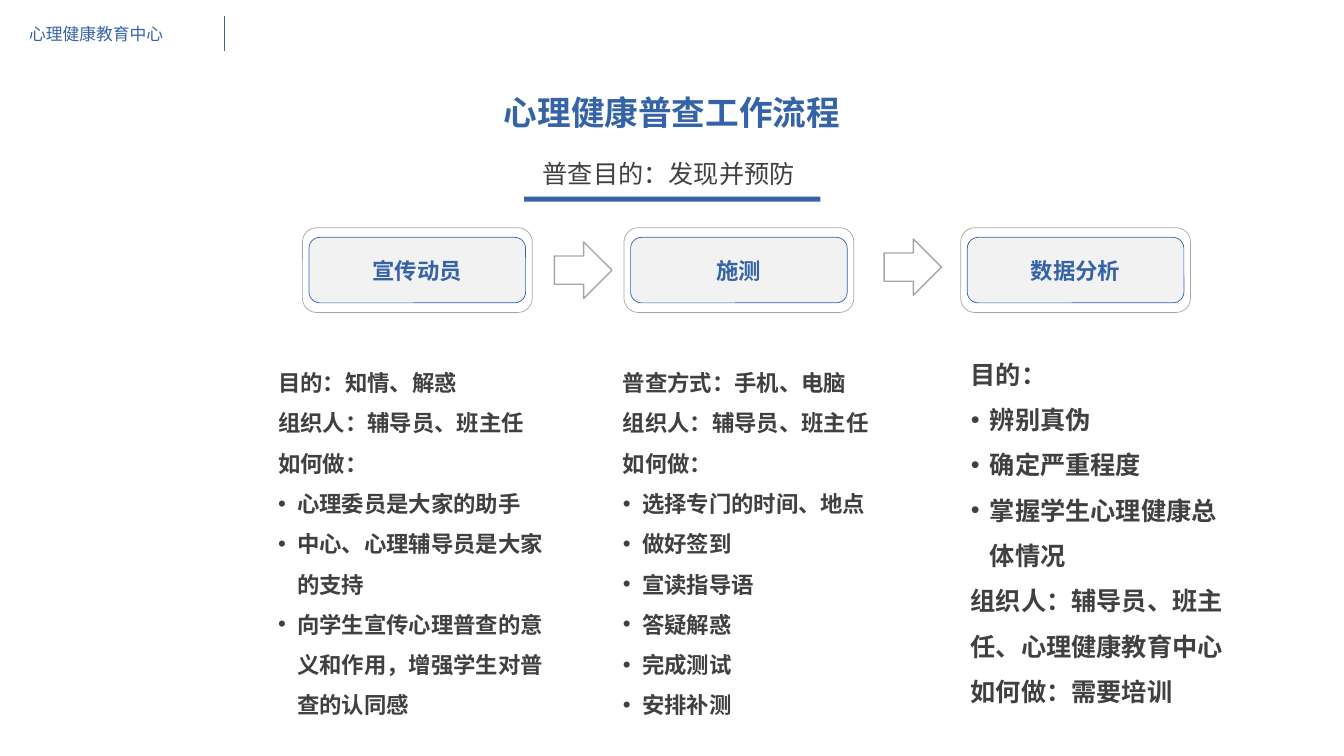
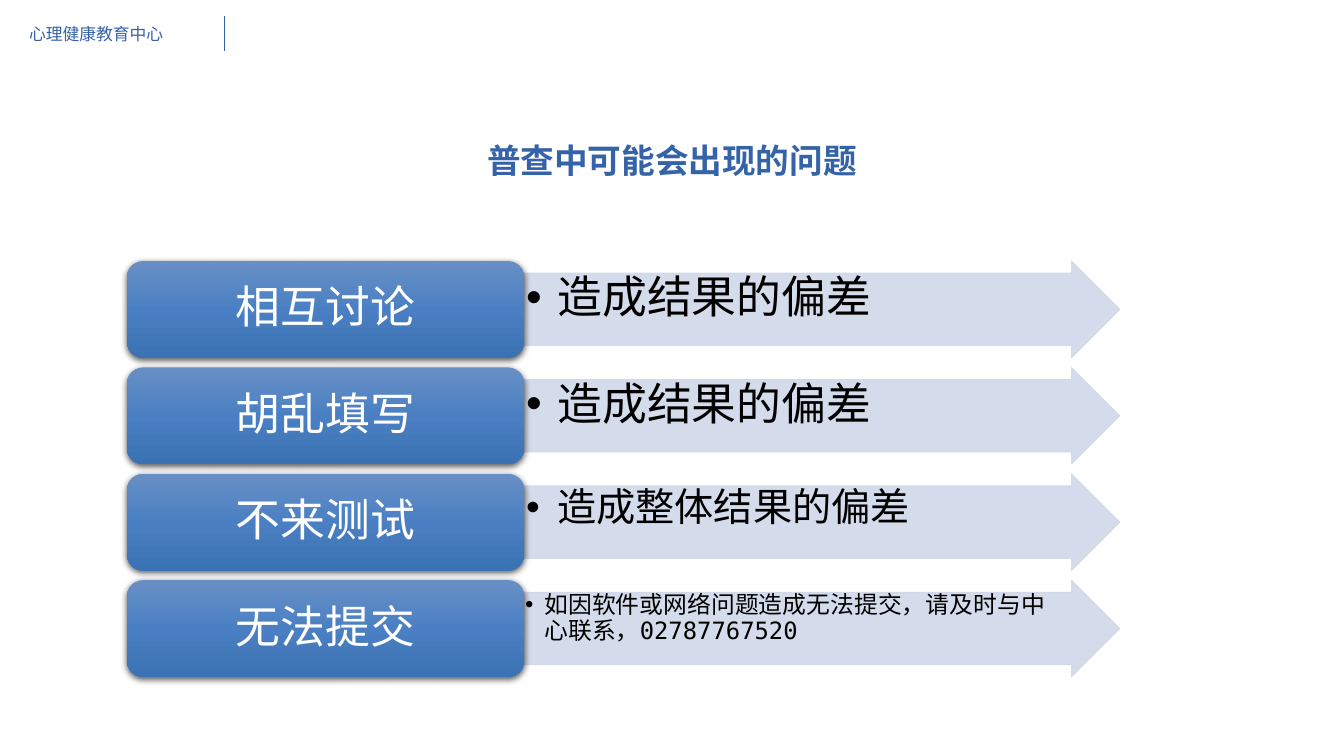
"""Builds two slides about the workflow and pitfalls of a mental health survey."""

import copy
import dataclasses
import typing

import lxml.etree
import pptx
import pptx.dml.color
import pptx.enum.dml
import pptx.enum.shapes
import pptx.enum.text
import pptx.oxml.ns
import pptx.util

SLIDE_WIDTH = pptx.util.Inches(13.333)
SLIDE_HEIGHT = pptx.util.Inches(7.5)

BLUE, GREY, DARK, PALE = "3563A8", "A6A6A6", "404040", "F2F2F2"
ARROW_BLUE, BLACK, WHITE = "D0D8E8", "000000", "FFFFFF"
BAR_GRADIENT = ((0, "688FC5"), (50, "4A80C3"), (100, "3B72B3"))
SANS, MONO, HEADER_FONT = "Noto Sans CJK SC", "DejaVu Sans Mono", "Arial"

PRESET = pptx.enum.shapes.MSO_SHAPE
ANCHOR = pptx.enum.text.MSO_ANCHOR
ALIGN = pptx.enum.text.PP_ALIGN
LEFT, CENTER = ALIGN.LEFT, ALIGN.CENTER


@dataclasses.dataclass(frozen=True)
class Area:
    """Holds a rectangle in percent of the slide's width and height."""

    left: float
    top: float
    width: float
    height: float

    def lengths(self) -> tuple[int, int, int, int]:
        """Returns left, top, width and height as lengths."""
        return (across(self.left), down(self.top), across(self.width), down(self.height))

    def centered(self, width: float, height: float) -> "Area":
        """Returns a smaller area with the same centre."""
        return Area(self.left + (self.width - width) / 2,
                    self.top + (self.height - height) / 2, width, height)


@dataclasses.dataclass(frozen=True)
class Style:
    """Holds the format of a text."""

    size: float
    color: str
    font: str = SANS
    bold: bool = False
    align: typing.Any = LEFT
    spacing: float = 1.0
    indent: float = 0.19


@dataclasses.dataclass(frozen=True)
class Step:
    """Holds one workflow step with its card and its list."""

    name: str
    card_left: float
    area: Area
    size: float
    lines: tuple[str, ...]


@dataclasses.dataclass(frozen=True)
class Problem:
    """Holds one problem with its effect."""

    name: str
    effect: str
    size: float = 32
    indent: float = 0.31
    inset: float = 0.02


BULLET = "•"
STEPS = (
    Step("宣传动员", 22.5, Area(19.95, 46.4, 22.2, 52), 16, (
        "目的：知情、解惑", "组织人：辅导员、班主任", "如何做：",
        "•心理委员是大家的助手", "•中心、心理辅导员是大家的支持",
        "•向学生宣传心理普查的意义和作用，增强学生对普查的认同感")),
    Step("施测", 46.43, Area(45.6, 46.4, 22.2, 52), 16, (
        "普查方式：手机、电脑", "组织人：辅导员、班主任", "如何做：",
        "•选择专门的时间、地点", "•做好签到", "•宣读指导语",
        "•答疑解惑", "•完成测试", "•安排补测")),
    Step("数据分析", 71.48, Area(71.48, 44.8, 21.22, 52), 18, (
        "目的：", "•辨别真伪", "•确定严重程度", "•掌握学生心理健康总体情况",
        "组织人：辅导员、班主任、心理健康教育中心", "如何做：需要培训")),
)
STEP_ARROWS = (Area(41.25, 32, 4.28, 7.47), Area(65.78, 31.6, 4.28, 7.47))
PROBLEMS = (
    Problem("相互讨论", "•造成结果的偏差"),
    Problem("胡乱填写", "•造成结果的偏差"),
    Problem("不来测试", "•造成整体结果的偏差", 28),
    Problem("无法提交", "•如因软件或网络问题造成无法提交，请及时与中心联系，02787767520",
            17, 0.19, 0.01),
)
PROBLEM_TOP, PROBLEM_PITCH, PROBLEM_HEIGHT = 34.53, 14.07, 12.8

TITLE_STYLE = Style(24, BLUE, bold=True, align=CENTER)
CARD_STYLE = Style(16, BLUE, bold=True, align=CENTER)
BAR_STYLE = Style(32, WHITE, MONO, align=CENTER, spacing=0.9)


def across(share: float) -> int:
    """Returns a share of the slide's width."""
    return round(SLIDE_WIDTH * share / 100)


def down(share: float) -> int:
    """Returns a share of the slide's height."""
    return round(SLIDE_HEIGHT * share / 100)


def color(value: str) -> pptx.dml.color.RGBColor:
    """Returns the colour of a hex string."""
    return pptx.dml.color.RGBColor.from_string(value)


def assign(target: typing.Any, formats: dict[str, typing.Any]) -> None:
    """Sets each attribute of the target."""
    for name, value in formats.items():
        setattr(target, name, value)


def add_element(parent: typing.Any, tag: str, **attributes: str) -> typing.Any:
    """Appends a drawing element."""
    return lxml.etree.SubElement(parent, pptx.oxml.ns.qn(f"a:{tag}"), attributes)


def write_text(box: typing.Any, lines: typing.Sequence[str], style: Style,
               anchor: typing.Any = ANCHOR.TOP, wrap: bool = True,
               insets: tuple[float, float, float, float] = (0.1, 0.05, 0.1, 0.05)) -> None:
    """Writes one paragraph a line, with a bullet where the line has one."""
    frame = box.text_frame
    sides = ("margin_left", "margin_top", "margin_right", "margin_bottom")
    assign(frame, {"auto_size": pptx.enum.text.MSO_AUTO_SIZE.NONE,
                   "word_wrap": wrap, "vertical_anchor": anchor})
    assign(frame, {side: pptx.util.Inches(inset) for side, inset in zip(sides, insets)})
    for index, line in enumerate(lines):
        para = frame.add_paragraph() if index else frame.paragraphs[0]
        assign(para, {"alignment": style.align, "line_spacing": style.spacing,
                      "space_before": pptx.util.Pt(0), "space_after": pptx.util.Pt(0)})
        bulleted = line.startswith(BULLET)
        indent = pptx.util.Inches(style.indent) if bulleted else 0
        properties = para._p.get_or_add_pPr()
        properties.set("marL", str(indent))
        properties.set("indent", str(-indent))
        if bulleted:
            add_element(properties, "buFont", typeface="Arial")
            add_element(properties, "buChar", char=BULLET)
        else:
            add_element(properties, "buNone")
        span = para.add_run()
        span.text = line.removeprefix(BULLET)
        assign(span.font, {"size": pptx.util.Pt(style.size), "bold": style.bold,
                           "name": style.font})
        span.font.color.rgb = color(style.color)
        add_element(span.font._element, "ea", typeface=SANS)


def fill_placeholder(page: typing.Any, index: int, area: Area,
                     lines: typing.Sequence[str], style: Style) -> None:
    """Moves a placeholder and writes its text."""
    box = page.placeholders[index]
    assign(box, dict(zip(("left", "top", "width", "height"), area.lengths())))
    write_text(box, lines, style)


def add_preset(page: typing.Any, kind: typing.Any, area: Area, fill: str = "",
               line: str = "", weight: float = 0.5) -> typing.Any:
    """Adds a preset shape without a shadow."""
    shape = page.shapes.add_shape(kind, *area.lengths())
    shape.shadow.inherit = False
    if fill:
        shape.fill.solid()
        shape.fill.fore_color.rgb = color(fill)
    else:
        shape.fill.background()
    if line:
        shape.line.color.rgb = color(line)
        shape.line.width = pptx.util.Pt(weight)
    else:
        shape.line.fill.background()
    return shape


def make_translucent(shape: typing.Any, opacity: int) -> None:
    """Sets the opacity of a shape's fill and line in percent."""
    for tone in shape._element.spPr.iter(pptx.oxml.ns.qn("a:srgbClr")):
        add_element(tone, "alpha", val=str(opacity * 1000))


def style_bar(shape: typing.Any) -> None:
    """Gives a bar its gradient and shadow."""
    shape.fill.gradient()
    shape.fill.gradient_angle = 270
    properties = shape._element.spPr
    stops = properties.find(".//" + pptx.oxml.ns.qn("a:gsLst"))
    for stop in list(stops):
        stops.remove(stop)
    for position, tone in BAR_GRADIENT:
        stop = add_element(stops, "gs", pos=str(position * 1000))
        add_element(stop, "srgbClr", val=tone)
    effects = properties.find(pptx.oxml.ns.qn("a:effectLst"))
    shadow = add_element(effects, "outerShdw", blurRad=str(pptx.util.Pt(4.5)),
                         dist=str(pptx.util.Pt(1.5)), dir="5400000", rotWithShape="0")
    add_element(add_element(shadow, "srgbClr", val=BLACK), "alpha", val="63000")


def start_page(deck: typing.Any, layout: int, title: str, title_top: float) -> typing.Any:
    """Adds a slide with its header and title."""
    page = deck.slides.add_slide(deck.slide_layouts[layout])
    for box in list(page.placeholders):
        if box.placeholder_format.idx >= 10:
            box._element.getparent().remove(box._element)
    fill_placeholder(page, 0, Area(30.15, title_top, 39.68, 6.67), (title,), TITLE_STYLE)
    divider = page.shapes.add_connector(
        pptx.enum.shapes.MSO_CONNECTOR.STRAIGHT,
        across(16.72), down(2.13), across(16.72), down(6.8))
    divider.line.color.rgb = color(BLUE)
    divider.line.width = pptx.util.Pt(0.5)
    add_element(divider._element.spPr, "effectLst")
    header = page.shapes.add_textbox(*Area(1.42, 2.53, 11.62, 4).lengths())
    write_text(header, ("心理健康教育中心",), Style(12, BLUE, HEADER_FONT), wrap=False)
    return page


def add_workflow(deck: typing.Any) -> None:
    """Adds the slide with the workflow steps."""
    page = start_page(deck, 4, "心理健康普查工作流程", 11.47)
    fill_placeholder(page, 1, Area(26.62, 20.27, 46.28, 5.33),
                     ("普查目的：发现并预防",), Style(18, DARK, align=CENTER))
    add_preset(page, PRESET.RECTANGLE, Area(39, 26, 22.05, 0.67), BLUE)
    for index, step in enumerate(STEPS, start=2):
        frame = Area(step.card_left, 30.13, 17.1, 11.2)
        card = add_preset(page, PRESET.ROUNDED_RECTANGLE,
                          frame.centered(16.12, 8.67), PALE, BLUE)
        write_text(card, (step.name,), CARD_STYLE, ANCHOR.MIDDLE)
        add_preset(page, PRESET.ROUNDED_RECTANGLE, frame, line=GREY)
        fill_placeholder(page, index, step.area, step.lines,
                         Style(step.size, DARK, bold=True, spacing=1.5))
    for area in STEP_ARROWS:
        add_preset(page, PRESET.RIGHT_ARROW, area, line=GREY, weight=1)


def add_problems(deck: typing.Any) -> None:
    """Adds the slide with the problems and their effects."""
    page = start_page(deck, 5, "普查中可能会出现的问题", 17.87)
    for row, problem in enumerate(PROBLEMS):
        top = PROBLEM_TOP + row * PROBLEM_PITCH
        arrow = add_preset(page, PRESET.RIGHT_ARROW, Area(39, top, 44.33, PROBLEM_HEIGHT),
                           ARROW_BLUE, ARROW_BLUE)
        arrow.adjustments[0] = 0.75
        make_translucent(arrow, 90)
        inset = problem.inset
        write_text(arrow, (problem.effect,),
                   Style(problem.size, BLACK, MONO, spacing=0.9, indent=problem.indent),
                   insets=(inset, inset, 0.24 + inset, inset))
        bar = add_preset(page, PRESET.ROUNDED_RECTANGLE,
                         Area(9.45, top, 29.55, PROBLEM_HEIGHT))
        style_bar(bar)
        write_text(bar, (problem.name,), BAR_STYLE, ANCHOR.MIDDLE,
                   insets=(0.18, 0.12, 0.18, 0.12))


def main() -> None:
    """Builds and saves the deck."""
    deck = pptx.Presentation()
    assign(deck, {"slide_width": SLIDE_WIDTH, "slide_height": SLIDE_HEIGHT})
    add_workflow(deck)
    add_problems(deck)
    deck.save("out.pptx")


if __name__ == "__main__":
    main()
